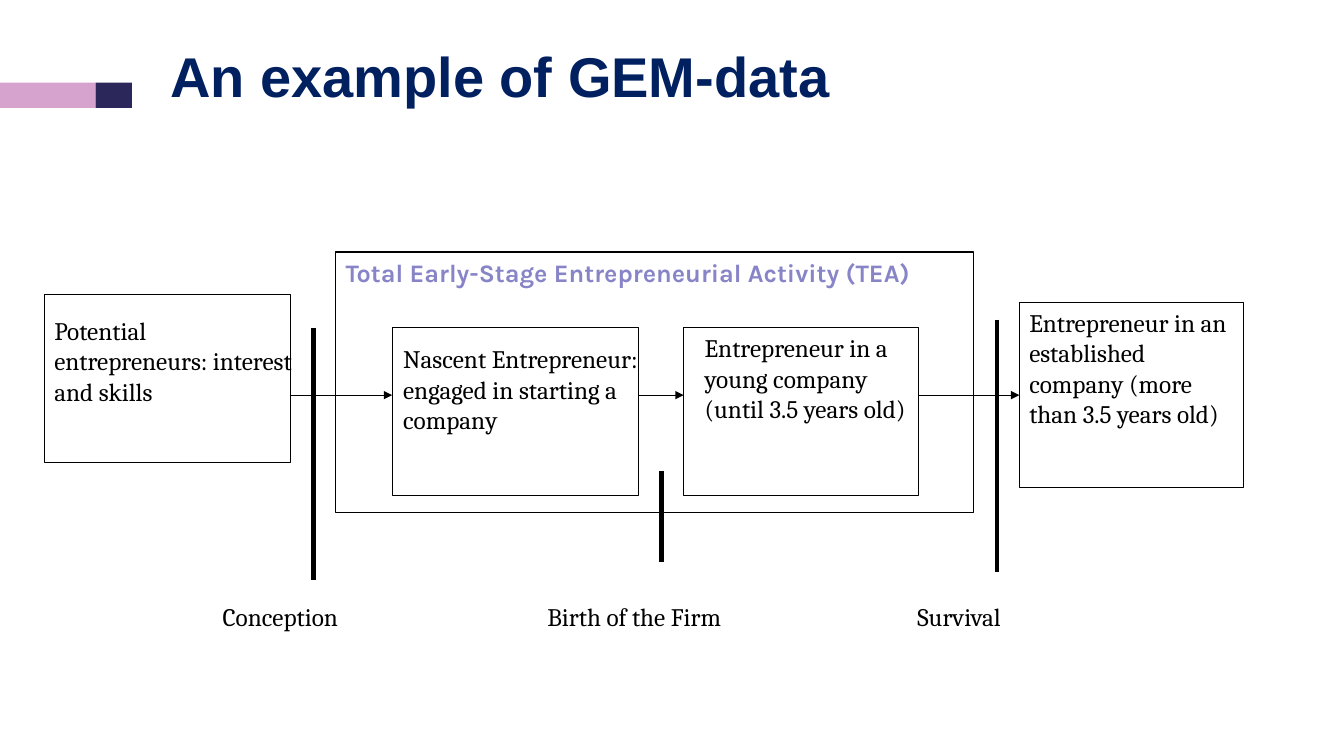
from dataclasses import dataclass

from lxml import etree
from pptx import Presentation
from pptx.dml.color import RGBColor
from pptx.enum.shapes import MSO_CONNECTOR, MSO_SHAPE
from pptx.enum.text import MSO_ANCHOR
from pptx.oxml.ns import qn
from pptx.shapes.autoshape import Shape
from pptx.shapes.connector import Connector
from pptx.slide import Slide
from pptx.util import Inches, Pt

STRAIGHT = MSO_CONNECTOR.STRAIGHT
RECTANGLE = MSO_SHAPE.RECTANGLE
TOP, MIDDLE = MSO_ANCHOR.TOP, MSO_ANCHOR.MIDDLE

BLACK = RGBColor(0x00, 0x00, 0x00)
NAVY = RGBColor(0x00, 0x20, 0x60)
PINK = RGBColor(0xD5, 0xA3, 0xCD)
INDIGO = RGBColor(0x2C, 0x27, 0x5B)
LAVENDER = RGBColor(0x87, 0x84, 0xC7)

LEFT_SITE = 1
ARROW_Y = 3.92
LABEL_TOP = 5.92
LABEL_HEIGHT = 0.4


@dataclass(frozen=True)
class Area:
    left: float
    top: float
    width: float
    height: float

    def lengths(self) -> tuple[int, int, int, int]:
        return (Inches(self.left), Inches(self.top),
                Inches(self.width), Inches(self.height))


@dataclass(frozen=True)
class Style:
    font: str = "Cambria"
    size: int = 18
    color: RGBColor = BLACK
    bold: bool = False
    anchor: MSO_ANCHOR = TOP


@dataclass(frozen=True)
class Stage:
    text: str
    text_area: Area
    frame: Area


@dataclass(frozen=True)
class Milestone:
    label: str
    label_left: float
    label_width: float
    bar_x: float
    bar_top: float
    bar_bottom: float


BODY = Style()
TITLE = Style("Arial", 40, NAVY, True, MIDDLE)
HEADING = Style("Karla", 18, LAVENDER, True)

TEA_FRAME = Area(3.33, 2.5, 6.33, 2.58)
STAGES = [
    Stage("Potential entrepreneurs: interest and skills",
          Area(0.44, 3.08, 2.67, 1.01), Area(0.44, 2.92, 2.44, 1.67)),
    Stage("Nascent Entrepreneur: engaged in starting a company",
          Area(3.9, 3.36, 2.56, 1.31), Area(3.89, 3.25, 2.44, 1.67)),
    Stage("Entrepreneur in a young company (until 3.5 years old)",
          Area(6.89, 3.25, 2.22, 1.31), Area(6.78, 3.25, 2.33, 1.67)),
    Stage("Entrepreneur in an established company (more than 3.5 years old)",
          Area(10.11, 3, 2.22, 1.31), Area(10.11, 3, 2.22, 1.84)),
]
MILESTONES = [
    Milestone("Conception", 2.11, 2.67, 3.11, 3.25, 5.75),
    Milestone("Birth of the Firm", 5.33, 2.78, 6.56, 4.67, 5.58),
    Milestone("Survival", 9, 1.89, 9.89, 3.17, 5.67),
]


def add_text(page: Slide, area: Area, text: str, style: Style) -> None:
    box = page.shapes.add_textbox(*area.lengths())
    box.text_frame.word_wrap = True
    box.text_frame.vertical_anchor = style.anchor
    para = box.text_frame.paragraphs[0]
    span = para.add_run()
    span.text = text
    span.font.name = style.font
    span.font.size = Pt(style.size)
    span.font.bold = style.bold
    span.font.color.rgb = style.color


def add_block(page: Slide, area: Area, color: RGBColor) -> None:
    """Draw a filled rectangle without an outline."""
    block = page.shapes.add_shape(RECTANGLE, *area.lengths())
    block.shadow.inherit = False
    block.fill.solid()
    block.fill.fore_color.rgb = color
    block.line.fill.background()


def add_frame(page: Slide, area: Area) -> Shape:
    """Draw an outlined rectangle without a fill."""
    frame = page.shapes.add_shape(RECTANGLE, *area.lengths())
    frame.shadow.inherit = False
    frame.fill.background()
    frame.line.color.rgb = BLACK
    frame.line.width = Pt(0.75)
    return frame


def add_line(page: Slide, start: tuple[float, float],
             end: tuple[float, float], weight: float) -> Connector:
    line = page.shapes.add_connector(
        STRAIGHT, *(Inches(value) for value in (*start, *end)))
    line.line.color.rgb = BLACK
    line.line.width = Pt(weight)
    etree.SubElement(line._element.spPr, qn("a:effectLst"))
    return line


def add_arrow(page: Slide, start_x: float, end_x: float) -> Connector:
    arrow = add_line(page, (start_x, ARROW_Y), (end_x, ARROW_Y), 0.75)
    outline = arrow.line._get_or_add_ln()
    etree.SubElement(outline, qn("a:tailEnd"), type="triangle")
    return arrow


def main() -> None:
    deck = Presentation()
    deck.slide_width, deck.slide_height = Inches(13.33), Inches(7.5)
    page = deck.slides.add_slide(deck.slide_layouts[6])

    add_block(page, Area(0, 0.82, 0.95, 0.25), PINK)
    add_block(page, Area(0.95, 0.82, 0.36, 0.25), INDIGO)
    add_text(page, Area(1.59, 0.12, 11.7, 1.25), "An example of GEM-data", TITLE)

    frames = []
    for stage in STAGES:
        add_text(page, stage.text_area, stage.text, BODY)
        frames.append(add_frame(page, stage.frame))

    add_frame(page, TEA_FRAME)
    add_text(page, Area(TEA_FRAME.left, TEA_FRAME.top, TEA_FRAME.width, LABEL_HEIGHT),
             "Total Early-Stage Entrepreneurial Activity (TEA)", HEADING)

    for stage, following in zip(STAGES, STAGES[1:]):
        arrow = add_arrow(page, stage.frame.left + stage.frame.width,
                          following.frame.left)
    # Only the last arrow meets its frame at mid-height.
    arrow.end_connect(frames[-1], LEFT_SITE)

    for milestone in MILESTONES:
        add_line(page, (milestone.bar_x, milestone.bar_top),
                 (milestone.bar_x, milestone.bar_bottom), 3)
        add_text(page, Area(milestone.label_left, LABEL_TOP,
                            milestone.label_width, LABEL_HEIGHT),
                 milestone.label, BODY)

    deck.save("out.pptx")


if __name__ == "__main__":
    main()
